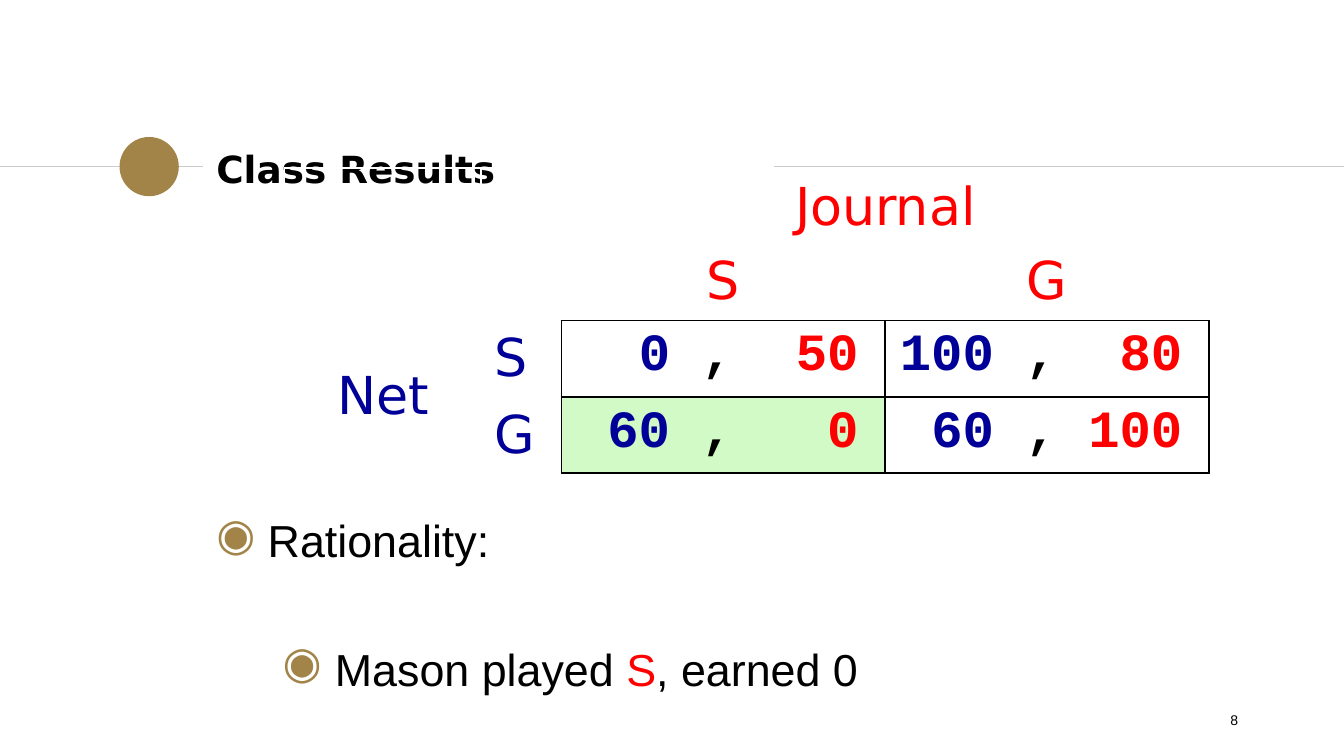
from lxml import etree
from pptx import Presentation
from pptx.dml.color import RGBColor
from pptx.enum.shapes import MSO_CONNECTOR, MSO_SHAPE
from pptx.enum.text import MSO_ANCHOR, PP_ALIGN
from pptx.oxml.ns import qn
from pptx.util import Cm, Pt

STRAIGHT, OVAL = MSO_CONNECTOR.STRAIGHT, MSO_SHAPE.OVAL
TOP, MIDDLE, BOTTOM = MSO_ANCHOR.TOP, MSO_ANCHOR.MIDDLE, MSO_ANCHOR.BOTTOM
LEFT, CENTER, RIGHT = PP_ALIGN.LEFT, PP_ALIGN.CENTER, PP_ALIGN.RIGHT

BLACK, RED, NAVY = "000000", "FF0000", "000099"
GOLD, GREY, GREEN = "A28448", "CCCCCC", "D2FAC6"

TITLE = "Class Results"
PAGE = "8"
ROW_PLAYER, COLUMN_PLAYER = "Net", "Journal"
MOVES = ["S", "G"]
PAYOFFS = [[(0, 50), (100, 80)], [(60, 0), (60, 100)]]
HIGHLIGHT = (1, 0)
# text pieces with colour, left margin, hanging indent, space before
BULLETS = [
    ([("Rationality:", BLACK)], 0.97, 0.97, 0),
    ([("Mason played ", BLACK), ("S", RED), (", earned 0", BLACK)], 2.24, 0.99, 40),
]

RULE_Y = 3.15
RULES = [(0, 3.84), (14.63, 25.4)]
COLUMN_WIDTHS = [3.71, 1.52, 6.12, 6.12]
ROW_HEIGHT = 1.4
PAYOFF_TABS = [1.8, 2.99, 5.36]

TITLE_FONT = {"name": "DejaVu Sans", "size": Pt(20), "bold": True}
PAGE_FONT = {"name": "Arial", "size": Pt(7.5)}
BODY_FONT = {"name": "Arial", "size": Pt(24)}
LABEL_FONT = {"name": "DejaVu Sans", "size": Pt(28), "bold": False}
PAYOFF_FONT = {"name": "Courier New", "size": Pt(28), "bold": True}


def rgb(color):
    return RGBColor.from_string(color)


def add_node(parent, tag, **attributes):
    return etree.SubElement(parent, qn(tag), {k: str(v) for k, v in attributes.items()})


def write(paragraph, pieces, font, align=LEFT):
    paragraph.alignment = align
    for text, color in pieces:
        run = paragraph.add_run()
        run.text = text
        for key, value in font.items():
            setattr(run.font, key, value)
        run.font.color.rgb = rgb(color)


def add_text_frame(slide, place, anchor):
    frame = slide.shapes.add_textbox(*map(Cm, place)).text_frame
    frame.word_wrap = True
    frame.vertical_anchor = anchor
    return frame


def add_header(slide):
    for start, end in RULES:
        rule = slide.shapes.add_connector(STRAIGHT, Cm(start), Cm(RULE_Y), Cm(end), Cm(RULE_Y))
        rule.line.color.rgb = rgb(GREY)
        rule.line.width = Pt(0.75)
        add_node(rule._element.spPr, "a:effectLst")
    dot = slide.shapes.add_shape(OVAL, Cm(2.26), Cm(2.59), Cm(1.12), Cm(1.12))
    dot.shadow.inherit = False
    dot.fill.solid()
    dot.fill.fore_color.rgb = rgb(GOLD)
    dot.line.fill.background()

    title = add_text_frame(slide, (3.84, 2.57, 10.77, 1.22), MIDDLE)
    write(title.paragraphs[0], [(TITLE, BLACK)], TITLE_FONT)
    page = add_text_frame(slide, (17.93, 13.23, 5.72, 0.76), MIDDLE)
    write(page.paragraphs[0], [(PAGE, BLACK)], PAGE_FONT, RIGHT)


def add_bullets(slide):
    frame = add_text_frame(slide, (3.84, 4.5, 18.92, 8.64), BOTTOM)
    frame.margin_bottom = 0
    for i, (pieces, margin, hanging, before) in enumerate(BULLETS):
        paragraph = frame.add_paragraph() if i else frame.paragraphs[0]
        write(paragraph, pieces, BODY_FONT)
        paragraph.space_before = Pt(before)
        props = paragraph._p.get_or_add_pPr()
        props.set("marL", str(Cm(margin)))
        props.set("indent", str(-Cm(hanging)))
        add_node(add_node(props, "a:buClr"), "a:srgbClr", val=GOLD)
        add_node(props, "a:buChar", char="◉")


def add_borders(cell):
    for side in ("a:lnL", "a:lnR", "a:lnT", "a:lnB"):
        line = add_node(cell._tc.get_or_add_tcPr(), side, w=Pt(1))
        add_node(add_node(line, "a:solidFill"), "a:srgbClr", val=BLACK)


def fill_label(cell, text, color, align, anchor):
    cell.vertical_anchor = anchor
    write(cell.text_frame.paragraphs[0], [(text, color)], LABEL_FONT, align)


def fill_payoff(cell, row_payoff, column_payoff):
    paragraph = cell.text_frame.paragraphs[0]
    pieces = [(f"\t{row_payoff}", NAVY), ("\t,", BLACK), (f"\t{column_payoff}", RED)]
    write(paragraph, pieces, PAYOFF_FONT)
    tabs = add_node(paragraph._p.get_or_add_pPr(), "a:tabLst")
    for stop in PAYOFF_TABS:
        add_node(tabs, "a:tab", pos=Cm(stop), algn="r")
    add_borders(cell)


def add_game(slide):
    size = Cm(sum(COLUMN_WIDTHS)), Cm(4 * ROW_HEIGHT)
    game = slide.shapes.add_table(4, 4, Cm(5.38), Cm(3.18), *size).table
    game.first_row = game.horz_banding = False
    for column, width in zip(game.columns, COLUMN_WIDTHS):
        column.width = Cm(width)
    for row in game.rows:
        row.height = Cm(ROW_HEIGHT)

    game.cell(0, 2).merge(game.cell(0, 3))
    game.cell(2, 0).merge(game.cell(3, 0))
    fill_label(game.cell(0, 2), COLUMN_PLAYER, RED, CENTER, BOTTOM)
    fill_label(game.cell(2, 0), ROW_PLAYER, NAVY, CENTER, MIDDLE)
    for i, move in enumerate(MOVES):
        fill_label(game.cell(1, i + 2), move, RED, CENTER, TOP)
        fill_label(game.cell(i + 2, 1), move, NAVY, LEFT, MIDDLE)
        for j, payoffs in enumerate(PAYOFFS[i]):
            fill_payoff(game.cell(i + 2, j + 2), *payoffs)

    for cell in game.iter_cells():
        cell.fill.background()
    chosen = game.cell(HIGHLIGHT[0] + 2, HIGHLIGHT[1] + 2)
    chosen.fill.solid()
    chosen.fill.fore_color.rgb = rgb(GREEN)


def main():
    deck = Presentation()
    deck.slide_width, deck.slide_height = Cm(25.4), Cm(14.29)
    slide = deck.slides.add_slide(deck.slide_layouts[6])
    add_header(slide)
    add_bullets(slide)
    add_game(slide)
    deck.save("out.pptx")


if __name__ == "__main__":
    main()
